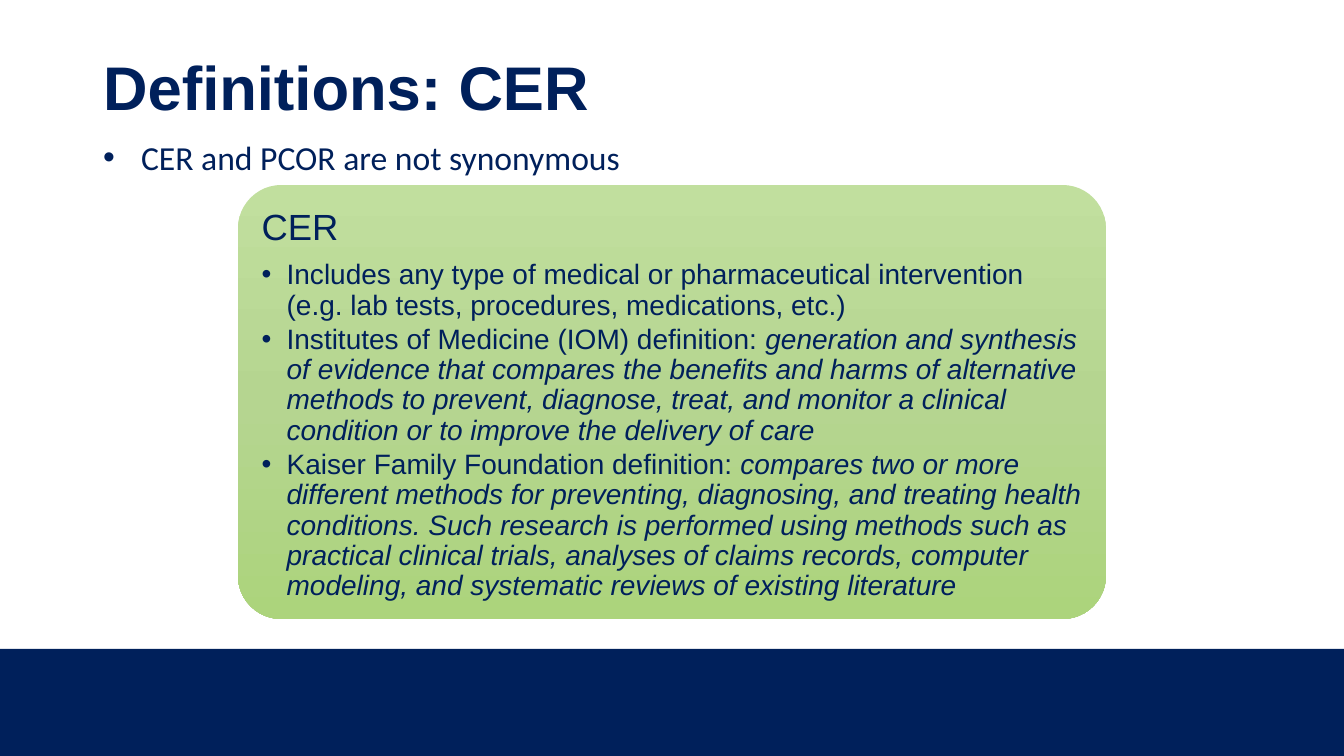
from copy import deepcopy

from lxml.etree import SubElement
from pptx import Presentation
from pptx.dml.color import RGBColor
from pptx.enum.shapes import MSO_SHAPE as Shape
from pptx.enum.text import MSO_ANCHOR as Anchor, MSO_AUTO_SIZE as AutoSize, PP_ALIGN as Align
from pptx.oxml.ns import qn
from pptx.util import Pt

PX = 914400 / 100.8
WIDTH, HEIGHT = 1344, 756
NAVY = "00205B"
CARD_STOPS = [(0, "C1DF9E"), (0.5, "B5D590"), (1, "ACD47C")]
DEFINITIONS = [
    ("Includes any type of medical or pharmaceutical intervention "
     "(e.g. lab tests, procedures, medications, etc.)", ""),
    ("Institutes of Medicine (IOM) definition: ",
     "generation and synthesis of evidence that compares the benefits and harms of "
     "alternative methods to prevent, diagnose, treat, and monitor a clinical "
     "condition or to improve the delivery of care"),
    ("Kaiser Family Foundation definition: ",
     "compares two or more different methods for preventing, diagnosing, and treating "
     "health conditions. Such research is performed using methods such as practical "
     "clinical trials, analyses of claims records, computer modeling, and systematic "
     "reviews of existing literature"),
]


def px(length):
    return round(length * PX)


def color(hex_value):
    return RGBColor.from_string(hex_value)


def assign(target, values):
    for name, value in values.items():
        setattr(target, name, value)


def place(shape, box):
    assign(shape, dict(zip(("left", "top", "width", "height"), map(px, box))))


def add_run(paragraph, text, **font_format):
    run = paragraph.add_run()
    run.text = text
    assign(run.font, {"name": "Arial", **font_format})
    run.font.color.rgb = color(NAVY)


def format_paragraph(paragraph, after=0, indent=None):
    if indent:
        properties = paragraph._p.get_or_add_pPr()
        properties.set("marL", str(px(indent)))
        properties.set("indent", str(-px(indent)))
        SubElement(properties, qn("a:buFont"), typeface="Arial")
        SubElement(properties, qn("a:buChar"), char="•")
    assign(paragraph, {"alignment": Align.LEFT, "line_spacing": 0.9,
                       "space_before": Pt(0), "space_after": Pt(after)})


def add_panel(slide, kind, box):
    panel = slide.shapes.add_shape(kind, *map(px, box))
    panel.shadow.inherit = False
    panel.line.fill.background()
    return panel


def draw_footer(slide, box):
    band = add_panel(slide, Shape.RECTANGLE, box)
    band.fill.solid()
    band.fill.fore_color.rgb = color(NAVY)


def draw_heading(slide, box):
    left, top, width, _ = box
    # Title
    title = slide.shapes.title
    place(title, box)
    assign(title.text_frame, {"word_wrap": True, "auto_size": AutoSize.NONE,
                              "vertical_anchor": Anchor.MIDDLE})
    heading = title.text_frame.paragraphs[0]
    format_paragraph(heading)
    add_run(heading, "Definitions: CER", size=Pt(44), bold=True)
    # Lead bullet
    lead = slide.placeholders[1]
    place(lead, (left, top + 118, 541, 47))
    assign(lead.text_frame, {"word_wrap": True, "auto_size": AutoSize.NONE,
                             "vertical_anchor": Anchor.TOP})
    statement = lead.text_frame.paragraphs[0]
    format_paragraph(statement, indent=38)
    add_run(statement, "CER and PCOR are not synonymous", name="Calibri", size=Pt(24))


def draw_card(slide, box):
    card = add_panel(slide, Shape.ROUNDED_RECTANGLE, box)
    card.adjustments[0] = 0.1
    # Three-stop gradient, light at the top
    card.fill.gradient()
    card.fill.gradient_angle = 270
    stop_list = card.fill._fill._gradFill.gsLst
    stop_list.insert(1, deepcopy(stop_list[0]))
    for stop, (position, shade) in zip(card.fill.gradient_stops, CARD_STOPS):
        stop.position = position
        stop.color.rgb = color(shade)
    # Heading and definitions
    frame = card.text_frame
    assign(frame, {"word_wrap": True, "vertical_anchor": Anchor.TOP})
    assign(frame, {f"margin_{side}": px(11) for side in ("left", "top", "right", "bottom")})
    heading = frame.paragraphs[0]
    format_paragraph(heading, after=9)
    add_run(heading, "CER", size=Pt(26))
    for lead_in, quotation in DEFINITIONS:
        definition = frame.add_paragraph()
        format_paragraph(definition, after=3, indent=25)
        add_run(definition, lead_in, size=Pt(20))
        if quotation:
            add_run(definition, quotation, size=Pt(20), italic=True)


def main():
    deck = Presentation()
    assign(deck, {"slide_width": px(WIDTH), "slide_height": px(HEIGHT)})
    slide = deck.slides.add_slide(deck.slide_layouts[1])
    draw_footer(slide, (0, 649, WIDTH, HEIGHT - 649))
    draw_heading(slide, (93, 18, 1159, 146))
    draw_card(slide, (238, 185, 868, 434))
    deck.save("out.pptx")


if __name__ == "__main__":
    main()
